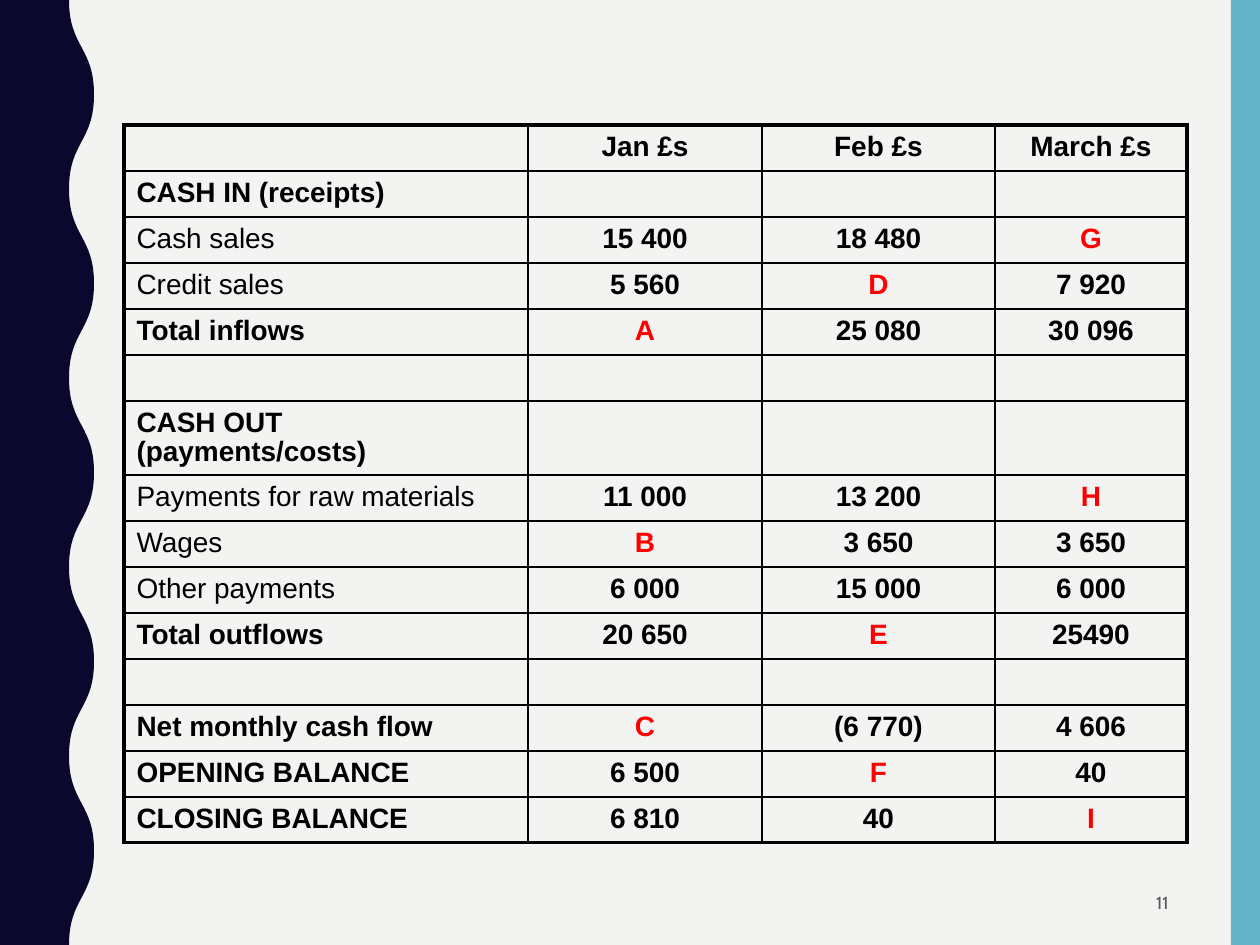
from pptx import Presentation
from pptx.dml.color import RGBColor
from pptx.enum.shapes import MSO_SHAPE as SHAPE
from pptx.enum.text import MSO_ANCHOR as ANCHOR, PP_ALIGN as ALIGN
from pptx.oxml import parse_xml
from pptx.oxml.ns import nsdecls, qn
from pptx.util import Emu, Pt


def px(length):
    return Emu(round(length * 914400 / 126))


def color(hex_code):
    return RGBColor.from_string(hex_code)


deck = Presentation()
deck.slide_width, deck.slide_height = px(1260), px(945)
slide = deck.slides.add_slide(deck.slide_layouts[6])
slide.background.fill.solid()
slide.background.fill.fore_color.rgb = color("F3F3F2")

# Right band
band = slide.shapes.add_shape(SHAPE.RECTANGLE, px(1231), 0, px(29), px(945))

# Left edge: ten half waves between trough and crest
TROUGH, CREST, HALF_WAVES = 69, 94, 10
half_height = 945 / HALF_WAVES
turns = [(px(CREST if i % 2 else TROUGH), px(i * half_height))
         for i in range(HALF_WAVES + 1)]
outline = slide.shapes.build_freeform(*turns[0])
outline.add_line_segments(turns[1:] + [(0, px(945)), (0, 0)])
wave = outline.convert_to_shape()

# Bend the straight segments between turns into curves
segments = list(wave._element.iter(qn("a:lnTo")))[:HALF_WAVES]
for segment, (x1, y1), (x2, y2) in zip(segments, turns, turns[1:]):
    middle = (y1 + y2) // 2
    points = "".join(f'<a:pt x="{x}" y="{y}"/>'
                     for x, y in ((x1, middle), (x2, middle), (x2, y2)))
    curve = parse_xml(f'<a:cubicBezTo {nsdecls("a")}>{points}</a:cubicBezTo>')
    segment.getparent().replace(segment, curve)

for decoration, fill in ((band, "62B4C6"), (wave, "0B082E")):
    decoration.shadow.inherit = False
    decoration.fill.solid()
    decoration.fill.fore_color.rgb = color(fill)
    decoration.line.fill.background()

# Cash flow table
cash_flow = [
    ("", "Jan £s", "Feb £s", "March £s"),
    ("CASH IN (receipts)", "", "", ""),
    ("Cash sales", "15 400", "18 480", "G"),
    ("Credit sales", "5 560", "D", "7 920"),
    ("Total inflows", "A", "25 080", "30 096"),
    ("", "", "", ""),
    ("CASH OUT (payments/costs)", "", "", ""),
    ("Payments for raw materials", "11 000", "13 200", "H"),
    ("Wages", "B", "3 650", "3 650"),
    ("Other payments", "6 000", "15 000", "6 000"),
    ("Total outflows", "20 650", "E", "25490"),
    ("", "", "", ""),
    ("Net monthly cash flow", "C", "(6 770)", "4 606"),
    ("OPENING BALANCE", "6 500", "F", "40"),
    ("CLOSING BALANCE", "6 810", "40", "I"),
]
regular_labels = {"Cash sales", "Credit sales", "Payments for raw materials",
                  "Wages", "Other payments"}
widths = [404, 234, 233, 192]
heights = [74 if "CASH OUT" in row[0] else 46 for row in cash_flow]
last_row, last_col = len(heights) - 1, len(widths) - 1

table = slide.shapes.add_table(len(heights), len(widths), px(124), px(125),
                               px(sum(widths)), px(sum(heights))).table
table.first_row = table.horz_banding = False
for column, width in zip(table.columns, widths):
    column.width = px(width)

for r, (entries, height) in enumerate(zip(cash_flow, heights)):
    table.rows[r].height = px(height)
    for c, entry in enumerate(entries):
        cell = table.cell(r, c)
        cell.fill.background()
        cell.vertical_anchor = ANCHOR.MIDDLE
        if entry:
            paragraph = cell.text_frame.paragraphs[0]
            paragraph.text = entry
            paragraph.alignment = ALIGN.CENTER if c else ALIGN.LEFT
            paragraph.line_spacing = 0.95
            font = paragraph.runs[0].font
            font.name, font.size = "Arial", Pt(16)
            font.bold = entry not in regular_labels
            # Single letters are the gaps to be worked out
            font.color.rgb = color("FF0000" if len(entry) == 1 else "000000")
        else:
            # Keep empty cells from stretching their row
            cell.margin_top = cell.margin_bottom = 0

        # Heavy outer frame, thin inner grid
        sides = {"lnL": c == 0, "lnR": c == last_col,
                 "lnT": r == 0, "lnB": r == last_row}
        properties = cell._tc.get_or_add_tcPr()
        for place, (side, outer) in enumerate(sides.items()):
            border = parse_xml(f'<a:{side} {nsdecls("a")}><a:solidFill>'
                               f'<a:srgbClr val="000000"/></a:solidFill></a:{side}>')
            border.set("w", str(Pt(2.25 if outer else 1)))
            properties.insert(place, border)

# Page number
page_number = slide.shapes.add_textbox(px(890), px(879), px(291), px(48)).text_frame
page_number.word_wrap = True
page_number.vertical_anchor = ANCHOR.MIDDLE
page_number.text = "11"
page_number.paragraphs[0].alignment = ALIGN.RIGHT
number_font = page_number.paragraphs[0].runs[0].font
number_font.name, number_font.size = "Cabin", Pt(10)
number_font.color.rgb = color("595959")

deck.save("out.pptx")
